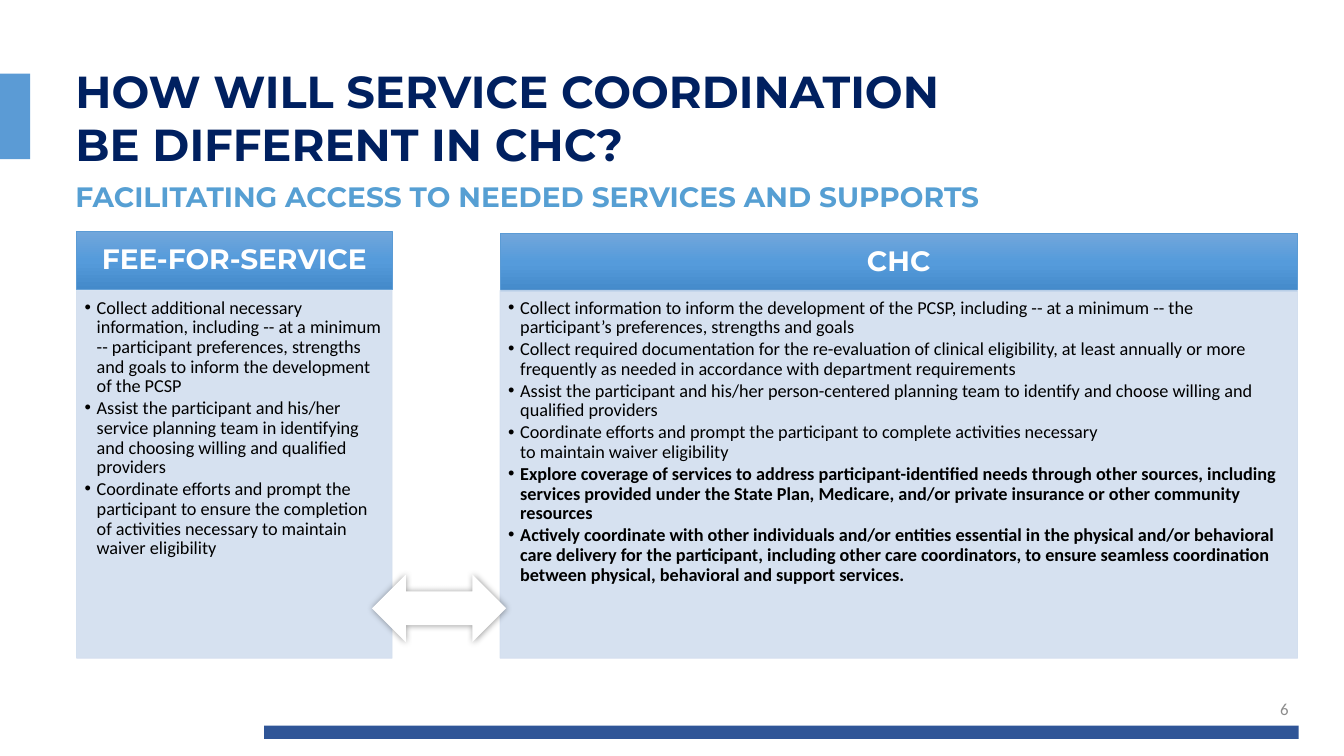
import pptx
import pptx.dml.color
import pptx.enum.shapes
import pptx.enum.text
import pptx.oxml
import pptx.oxml.ns
import pptx.util

# Content
TITLE = ["HOW WILL SERVICE COORDINATION", "BE DIFFERENT IN CHC?"]
SUBTITLE = "FACILITATING ACCESS TO NEEDED SERVICES AND SUPPORTS"
PAGE_NUMBER = "6"
# Each panel: heading, left, heading top, width, (text, bold) items
PANELS = [
    ("FEE-FOR-SERVICE", 76, 230, 313, [
        ("Collect additional necessary information, including -- at a minimum -- participant "
         "preferences, strengths and goals to inform the development of the PCSP", False),
        ("Assist the participant and his/her service planning team in identifying and choosing "
         "willing and qualified providers", False),
        ("Coordinate efforts and prompt the participant to ensure the completion of activities "
         "necessary to maintain waiver eligibility", False),
    ]),
    ("CHC", 496, 232, 791, [
        ("Collect information to inform the development of the PCSP, including -- at a minimum -- "
         "the participant’s preferences, strengths and goals", False),
        ("Collect required documentation for the re-evaluation of clinical eligibility, at least "
         "annually or more frequently as needed in accordance with department requirements", False),
        ("Assist the participant and his/her person-centered planning team to identify and choose "
         "willing and qualified providers", False),
        ("Coordinate efforts and prompt the participant to complete activities necessary \n"
         "to maintain waiver eligibility", False),
        ("Explore coverage of services to address participant-identified needs through other "
         "sources, including services provided under the State Plan, Medicare, and/or private "
         "insurance or other community resources", True),
        ("Actively coordinate with other individuals and/or entities essential in the physical "
         "and/or behavioral care delivery for the participant, including other care coordinators, "
         "to ensure seamless coordination between physical, behavioral and support services.", True),
    ]),
]
HEADING_HEIGHT, BODY_TOP, BODY_HEIGHT = 57, 288, 365
HEADING_STOPS = [(0, "71A6DB"), (50, "559BDB"), (100, "448ACA")]
BLUE, PALE = "5B9BD5", "D2DEEF"

PX = 9144  # 100 px to the inch
SHAPES = pptx.enum.shapes.MSO_SHAPE
ALIGN = pptx.enum.text.PP_ALIGN
ANCHOR = pptx.enum.text.MSO_ANCHOR


def px(value):
    return pptx.util.Emu(value * PX)


def color(value):
    return pptx.dml.color.RGBColor.from_string(value)


def element(xml):
    return pptx.oxml.parse_xml(xml.replace(">", f" {pptx.oxml.ns.nsdecls('a')}>", 1))


def add_box(kind, left, top, width, height, fill=None, line=None):
    shape = slide.shapes.add_shape(kind, px(left), px(top), px(width), px(height))
    shape.shadow.inherit = False
    if fill:
        shape.fill.solid()
        shape.fill.fore_color.rgb = color(fill)
    if line:
        shape.line.color.rgb = color(line)
        shape.line.width = pptx.util.Pt(0.5)
    else:
        shape.line.fill.background()
    return shape


def add_text_box(left, top, width, height):
    return slide.shapes.add_textbox(px(left), px(top), px(width), px(height))


def set_frame(shape, anchor=ANCHOR.TOP, insets=(10, 5, 10, 5)):
    frame = shape.text_frame
    frame.word_wrap = True
    frame.vertical_anchor = anchor
    (frame.margin_left, frame.margin_top,
     frame.margin_right, frame.margin_bottom) = map(px, insets)
    return frame


def add_paragraph(frame, text, size, font, text_color, bold=False, align=ALIGN.LEFT,
                  spacing=0.9, before=0, after=0, bullet=False):
    first = not frame.paragraphs[0].runs
    paragraph = frame.paragraphs[0] if first else frame.add_paragraph()
    paragraph.alignment = align
    paragraph.line_spacing = spacing
    paragraph.space_before = pptx.util.Pt(0 if first else before)
    paragraph.space_after = pptx.util.Pt(after)
    if bullet:
        properties = paragraph._p.get_or_add_pPr()
        properties.set("marL", str(px(12)))
        properties.set("indent", str(px(-12)))
        properties.append(element('<a:buFont typeface="Arial"></a:buFont>'))
        properties.append(element('<a:buChar char="•"></a:buChar>'))
    for index, part in enumerate(text.split("\n")):
        if index:
            paragraph.add_line_break()
        run = paragraph.add_run()
        run.text = part
        run.font.size = pptx.util.Pt(size)
        run.font.name = font
        run.font.bold = bold
        run.font.color.rgb = color(text_color)


def set_gradient(shape, stops):
    marks = "".join(f'<a:gs pos="{position * 1000}"><a:srgbClr val="{value}"/></a:gs>'
                    for position, value in stops)
    shape._element.spPr.insert(2, element(
        f'<a:gradFill><a:gsLst>{marks}</a:gsLst><a:lin ang="5400000" scaled="0"/></a:gradFill>'))


def set_opacity(shape, percent):
    for node in shape._element.spPr.iter(pptx.oxml.ns.qn("a:srgbClr")):
        node.append(element(f'<a:alpha val="{percent * 1000}"></a:alpha>'))


presentation = pptx.Presentation()
presentation.slide_width, presentation.slide_height = px(1333), px(750)
slide = presentation.slides.add_slide(presentation.slide_layouts[6])

# Footer bar, title and side accent
add_box(SHAPES.RECTANGLE, 262, 720, 1026, 13, "2F5597")
title = set_frame(add_text_box(65, 73, 1105, 104))
for text in TITLE:
    add_paragraph(title, text, 32, "Montserrat", "002060", True,
                  spacing=pptx.util.Pt(28), before=10)
add_box(SHAPES.RECTANGLE, 0, 73, 30, 85, BLUE)

# Comparison panels
for heading, left, top, width, items in PANELS:
    header = add_box(SHAPES.RECTANGLE, left, top, width, HEADING_HEIGHT, line=BLUE)
    set_gradient(header, HEADING_STOPS)
    add_paragraph(set_frame(header, ANCHOR.MIDDLE, (16, 9, 16, 9)), heading, 20,
                  "Montserrat", "FFFFFF", True, ALIGN.CENTER)
    body = add_box(SHAPES.RECTANGLE, left, BODY_TOP, width, BODY_HEIGHT, PALE, PALE)
    set_opacity(body, 90)
    frame = set_frame(body, insets=(8, 8, 10, 11))
    for text, bold in items:
        add_paragraph(frame, text, 13, "Calibri", "000000", bold, after=1.6, bullet=True)

# Arrow between the panels, with a soft glow of shadow
arrow = add_box(SHAPES.LEFT_RIGHT_ARROW, 369, 570, 133, 67, "FFFFFF")
arrow._element.spPr.find(pptx.oxml.ns.qn("a:effectLst")).append(element(
    '<a:outerShdw blurRad="63500" dist="0" dir="0" algn="ctr" rotWithShape="0">'
    '<a:srgbClr val="000000"><a:alpha val="40000"/></a:srgbClr></a:outerShdw>'))

# Subtitle and page number
add_paragraph(set_frame(add_text_box(65, 177, 1190, 33)), SUBTITLE, 20,
              "Montserrat", "569FD3", True)
add_paragraph(set_frame(add_text_box(988, 683, 300, 40), ANCHOR.MIDDLE), PAGE_NUMBER, 12,
              "Calibri", "8C8C8C", align=ALIGN.RIGHT, spacing=1.0)

presentation.save("out.pptx")
